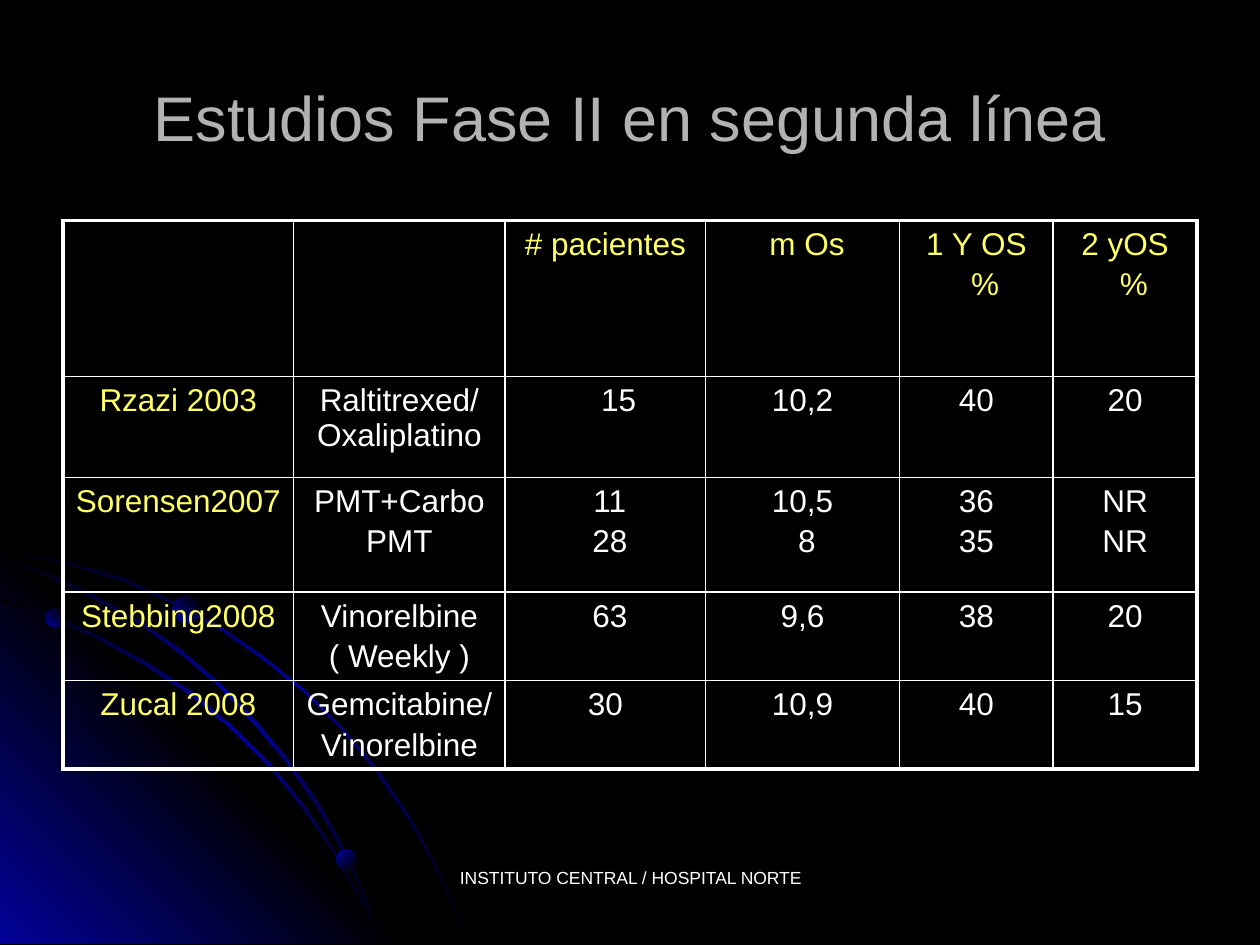
import copy

import pptx
import pptx.dml.color
import pptx.enum.text
import pptx.oxml
import pptx.oxml.ns
import pptx.util
from pptx.util import Inches

BLACK, BLUE, WHITE, YELLOW, GRAY = "000000", "010199", "FFFFFF", "FFFF66", "B2B2B2"
SPACE_WIDTH = 0.07  # inches, one space at 18 points

OUTER_ARC = [
    (0.57, 4.47), (0.28, 4.41), (0, 4.35), (0, 4.38), (0.28, 4.43), (0.56, 4.49),
    (0.97, 4.61), (1.35, 4.78), (1.73, 4.99), (2.08, 5.23), (2.41, 5.49), (2.71, 5.79),
    (2.98, 6.12), (3.23, 6.49), (3.37, 6.73), (3.5, 6.98), (3.6, 7.23), (3.7, 7.49),
    (3.72, 7.49), (3.62, 7.23), (3.52, 6.98), (3.39, 6.73), (3.25, 6.48), (3, 6.11),
    (2.72, 5.78), (2.42, 5.48), (2.09, 5.21), (1.74, 4.97), (1.36, 4.77), (0.98, 4.59)]
INNER_ARC = [
    (2.85, 7.14), (2.94, 7.32), (3.01, 7.49), (3.03, 7.49), (2.96, 7.3), (2.86, 7.12),
    (2.66, 6.76), (2.42, 6.4), (2.15, 6.06), (1.84, 5.76), (1.52, 5.49), (1.17, 5.26),
    (0.79, 5.05), (0.41, 4.88), (0, 4.75), (0, 4.77), (0.39, 4.9), (0.77, 5.07),
    (1.15, 5.28), (1.5, 5.51), (1.83, 5.78), (2.13, 6.08), (2.4, 6.41), (2.65, 6.77)]
MIDDLE_ARC = [
    (0, 4.42), (0, 4.44), (0.36, 4.57), (0.74, 4.75), (1.09, 4.94), (1.42, 5.18),
    (1.73, 5.44), (2.02, 5.75), (2.27, 6.05), (2.52, 6.41), (2.67, 6.67), (2.8, 6.94),
    (2.92, 7.22), (3.01, 7.49), (3.03, 7.49), (2.94, 7.2), (2.82, 6.93), (2.69, 6.65),
    (2.54, 6.39), (2.29, 6.03), (2.04, 5.73), (1.75, 5.43), (1.44, 5.16), (1.11, 4.93),
    (0.76, 4.73), (0.39, 4.55)]
CORNER = [(3.22, 7.49), (0, 7.49), (0, 4.27)]

COLUMN_WIDTHS = [1.83, 1.68, 1.59, 1.54, 1.22, 1.14]
ROW_HEIGHTS = [1.24, 0.8, 0.91, 0.66, 0.56]
# A leading space stands for one step of paragraph indent.
STUDIES = [
    ["", "", "# pacientes", " m Os", "1 Y OS\n  %", "2 yOS\n  %"],
    ["Rzazi 2003", "Raltitrexed/ Oxaliplatino", "   15", "10,2", "40", "20"],
    ["Sorensen2007", "PMT+Carbo\nPMT", " 11\n 28", "10,5\n 8", "36\n35", "NR\nNR"],
    ["Stebbing2008", "Vinorelbine\n( Weekly )", " 63", "9,6", "38", "20"],
    ["Zucal 2008", "Gemcitabine/\nVinorelbine", "30", "10,9", "40", "15"],
]


def rgb(color):
    return pptx.dml.color.RGBColor.from_string(color)


class SlideBuilder:
    font = "Arial"

    def __init__(self, slide):
        self.slide = slide
        slide.background.fill.solid()
        slide.background.fill.fore_color.rgb = rgb(BLACK)

    def format_paragraph(self, paragraph, size, color):
        paragraph.alignment = pptx.enum.text.PP_ALIGN.CENTER
        for run in paragraph.runs:
            run.font.name = self.font
            run.font.size = pptx.util.Pt(size)
            run.font.color.rgb = rgb(color)

    def title(self, text, left, top, width, height):
        shape = self.slide.shapes.title
        shape.left, shape.top = Inches(left), Inches(top)
        shape.width, shape.height = Inches(width), Inches(height)
        shape.text_frame.text = text
        shape.text_frame.vertical_anchor = pptx.enum.text.MSO_ANCHOR.MIDDLE
        self.format_paragraph(shape.text_frame.paragraphs[0], 36, GRAY)

    def text(self, text, left, top, width, height):
        shape = self.slide.shapes.add_textbox(
            Inches(left), Inches(top), Inches(width), Inches(height))
        shape.text_frame.word_wrap = True
        shape.text_frame.text = text
        self.format_paragraph(shape.text_frame.paragraphs[0], 10, WHITE)

    def gradient(self, shape, colors, angle):
        """Fill with evenly spaced colors; angle is counter-clockwise."""
        shape.shadow.inherit = False
        shape.line.fill.background()
        shape.fill.gradient()
        shape.fill.gradient_angle = angle
        stop_list = shape._element.spPr.find(".//" + pptx.oxml.ns.qn("a:gsLst"))
        while len(stop_list) < len(colors):
            stop_list.append(copy.deepcopy(stop_list[0]))
        for index, stop in enumerate(shape.fill.gradient_stops):
            stop.position = index / (len(colors) - 1)
            stop.color.rgb = rgb(colors[index])

    def outline(self, points, colors, angle):
        corners = [(Inches(x), Inches(y)) for x, y in points]
        builder = self.slide.shapes.build_freeform(*corners[0])
        builder.add_line_segments(corners[1:], close=True)
        self.gradient(builder.convert_to_shape(), colors, angle)

    def ball(self, left, top, size, angle):
        shape = self.slide.shapes.add_shape(
            pptx.enum.shapes.MSO_SHAPE.OVAL,
            Inches(left), Inches(top), Inches(size), Inches(size))
        self.gradient(shape, [BLUE, BLACK], angle)

    def border(self, cell, side, width):
        cell._tc.get_or_add_tcPr().append(pptx.oxml.parse_xml(
            f'<a:ln{side} {pptx.oxml.ns.nsdecls("a")} w="{pptx.util.Pt(width)}">'
            f'<a:solidFill><a:srgbClr val="{WHITE}"/></a:solidFill></a:ln{side}>'))

    def cell(self, cell, text, color):
        lines = text.split("\n")
        cell.text_frame.text = "\n".join(line.lstrip() for line in lines)
        for paragraph, line in zip(cell.text_frame.paragraphs, lines):
            self.format_paragraph(paragraph, 18, color)
            paragraph.space_before = pptx.util.Pt(3)
            indent = len(line) - len(line.lstrip())
            if indent:
                properties = paragraph._p.get_or_add_pPr()
                properties.set("marL", str(Inches(indent * SPACE_WIDTH)))
                properties.set("indent", "0")

    def table(self, rows, left, top, widths, heights):
        table = self.slide.shapes.add_table(
            len(rows), len(widths), Inches(left), Inches(top),
            Inches(sum(widths)), Inches(sum(heights))).table
        table.first_row = table.horz_banding = False
        for column, width in zip(table.columns, widths):
            column.width = Inches(width)
        for row, height in zip(table.rows, heights):
            row.height = Inches(height)
        last_row, last_column = len(rows) - 1, len(widths) - 1
        for r, texts in enumerate(rows):
            for c, text in enumerate(texts):
                cell = table.cell(r, c)
                self.cell(cell, text, YELLOW if r == 0 or c == 0 else WHITE)
                outer_sides = {"L": c == 0, "R": c == last_column,
                               "T": r == 0, "B": r == last_row}
                for side, is_outer in outer_sides.items():
                    self.border(cell, side, 2.25 if is_outer else 1)
                cell.fill.background()


def main():
    presentation = pptx.Presentation()
    presentation.slide_width, presentation.slide_height = Inches(10), Inches(7.5)
    builder = SlideBuilder(presentation.slides.add_slide(presentation.slide_layouts[5]))

    streak = [BLACK, BLUE, BLACK]
    builder.outline(OUTER_ARC, streak, 315)
    builder.outline(CORNER, [BLUE, BLACK, BLUE], 45)
    builder.outline(INNER_ARC, streak, 315)
    builder.outline(MIDDLE_ARC, streak, 315)
    builder.ball(0.36, 4.83, 0.15, 45)
    builder.ball(2.67, 6.74, 0.16, 315)
    builder.ball(1.37, 4.73, 0.21, 45)

    builder.title("Estudios Fase II en segunda línea", 0.5, 0.3, 9, 1.25)
    builder.table(STUDIES, 0.5, 1.75, COLUMN_WIDTHS, ROW_HEIGHTS)
    builder.text("INSTITUTO CENTRAL / HOSPITAL NORTE", 3.42, 6.83, 3.17, 0.5)
    presentation.save("out.pptx")


if __name__ == "__main__":
    main()
